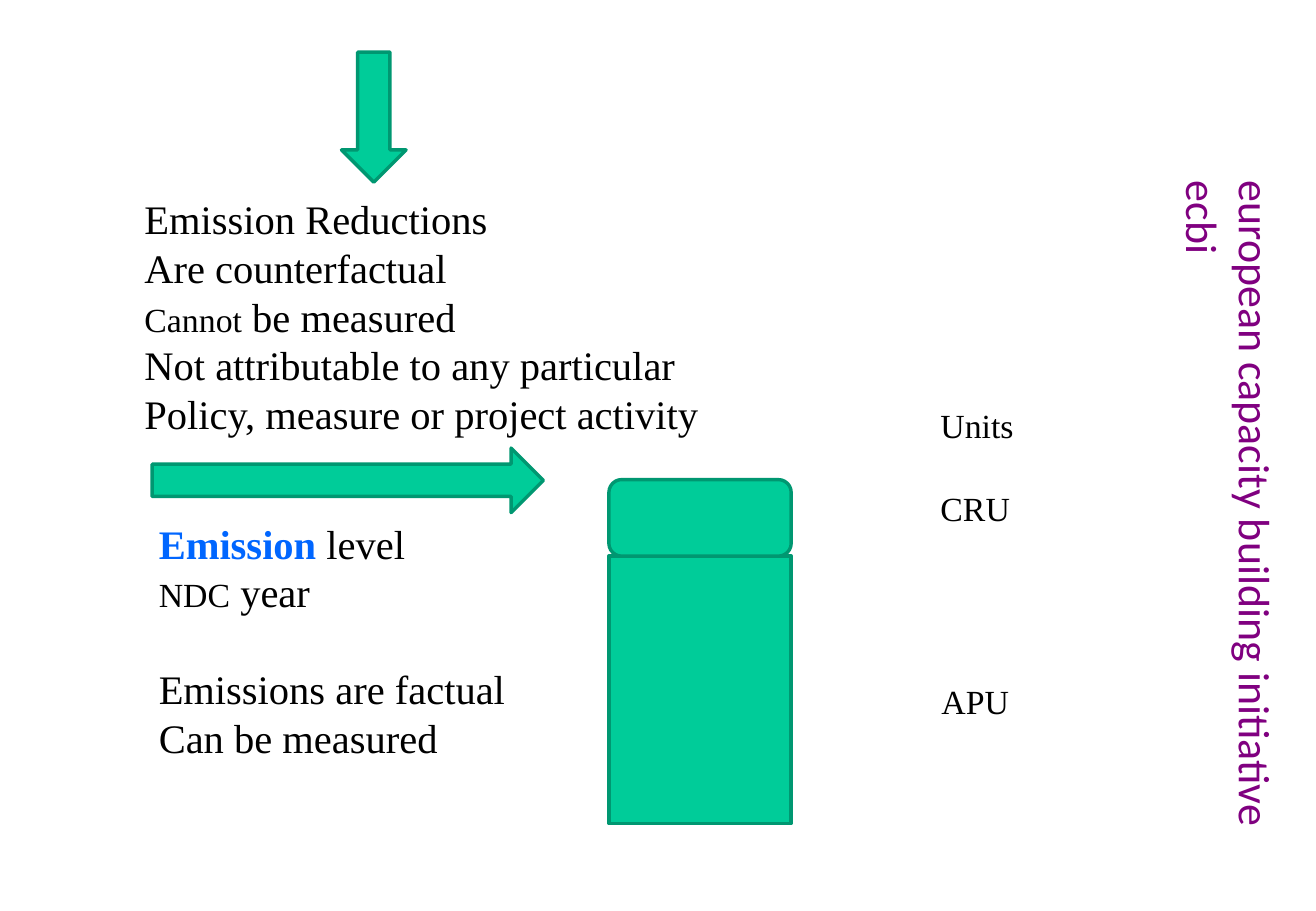
from pptx import Presentation
from pptx.dml.color import RGBColor
from pptx.enum.shapes import MSO_SHAPE
from pptx.util import Cm, Pt

COLORS = {"green": "00CC99", "outline": "009771", "text": "000000",
          "accent": "0066FF", "banner": "800080"}


class SlideBuilder:
    """Holds the slide and its style."""

    font_name = "Times New Roman"
    line_factor = 1.2

    def __init__(self, slide):
        self.slide = slide

    def color(self, name):
        return RGBColor.from_string(COLORS[name])

    def block(self, kind, left, top, width, height):
        shape = self.slide.shapes.add_shape(
            kind, Cm(left), Cm(top), Cm(width), Cm(height))
        shape.shadow.inherit = False
        shape.fill.solid()
        shape.fill.fore_color.rgb = self.color("green")
        shape.line.color.rgb = self.color("outline")
        shape.line.width = Pt(2)

    def text_box(self, left, top, width, height, wrap):
        box = self.slide.shapes.add_textbox(
            Cm(left), Cm(top), Cm(width), Cm(height))
        box.text_frame.word_wrap = wrap
        return box.text_frame

    def style(self, paragraph, size, font_name, color):
        paragraph.font.size = Pt(size)
        paragraph.font.name = font_name
        paragraph.font.color.rgb = self.color(color)

    def text(self, left, top, width, height, lines, size=24, wrap=False):
        """Each line is a list of (text, run format) pairs."""
        frame = self.text_box(left, top, width, height, wrap)
        paragraphs = []
        for index, line in enumerate(lines):
            paragraph = frame.add_paragraph() if index else frame.paragraphs[0]
            self.style(paragraph, size, self.font_name, "text")
            paragraph.line_spacing = Pt(size * self.line_factor)
            for content, run_format in line:
                run = paragraph.add_run()
                run.text = content
                if "size" in run_format:
                    run.font.size = Pt(run_format["size"])
                if "color" in run_format:
                    run.font.color.rgb = self.color(run_format["color"])
                    run.font.bold = True
            paragraphs.append(paragraph)
        return paragraphs

    def banner(self, left, top, width, height, content):
        frame = self.text_box(left, top, width, height, True)
        frame._txBody.bodyPr.set("vert", "eaVert")
        paragraph = frame.paragraphs[0]
        paragraph.text = content
        self.style(paragraph, 26, "Calibri", "banner")


def main():
    presentation = Presentation()
    presentation.slide_width = Cm(27.51)
    presentation.slide_height = Cm(19.05)
    builder = SlideBuilder(
        presentation.slides.add_slide(presentation.slide_layouts[6]))

    # Vertical banner
    builder.banner(25.04, 3.53, 1.9, 15.21,
                   "european capacity building initiative ecbi")

    # Stacked bar: emissions below, reductions above
    builder.block(MSO_SHAPE.RECTANGLE, 12.73, 11.63, 3.81, 5.59)
    builder.block(MSO_SHAPE.ROUNDED_RECTANGLE, 12.73, 10.03, 3.81, 1.6)

    # Unit labels
    for label, left, top, width in (("APU", 19.43, 14.12, 1.93),
                                    ("CRU", 19.41, 10.08, 1.98),
                                    ("Units", 19.41, 8.33, 2.06)):
        builder.text(left, top, width, 1.12, [[(label, {})]], size=20)

    # Emission level
    level = builder.text(3.07, 10.72, 7.82, 5.38, [
        [("Emission ", {"color": "accent"}), ("level", {})],
        [("NDC", {"size": 20}), (" year", {})],
        [("Emissions are factual", {})],
        [("Can be measured", {})],
    ])
    level[2].space_before = Pt(28.8)

    # Emission reductions
    builder.text(2.77, 3.94, 15.19, 7.44, [
        [("Emission Reductions", {})],
        [("Are counterfactual", {})],
        [("Cannot", {"size": 20}), (" be measured", {})],
        [("Not attributable to any particular", {})],
        [("Policy, measure or project activity", {})],
    ], wrap=True)

    # Arrows
    builder.block(MSO_SHAPE.DOWN_ARROW, 7.14, 1.09, 1.35, 2.72)
    builder.block(MSO_SHAPE.RIGHT_ARROW, 3.18, 9.37, 8.18, 1.35)

    presentation.save("out.pptx")


if __name__ == "__main__":
    main()
